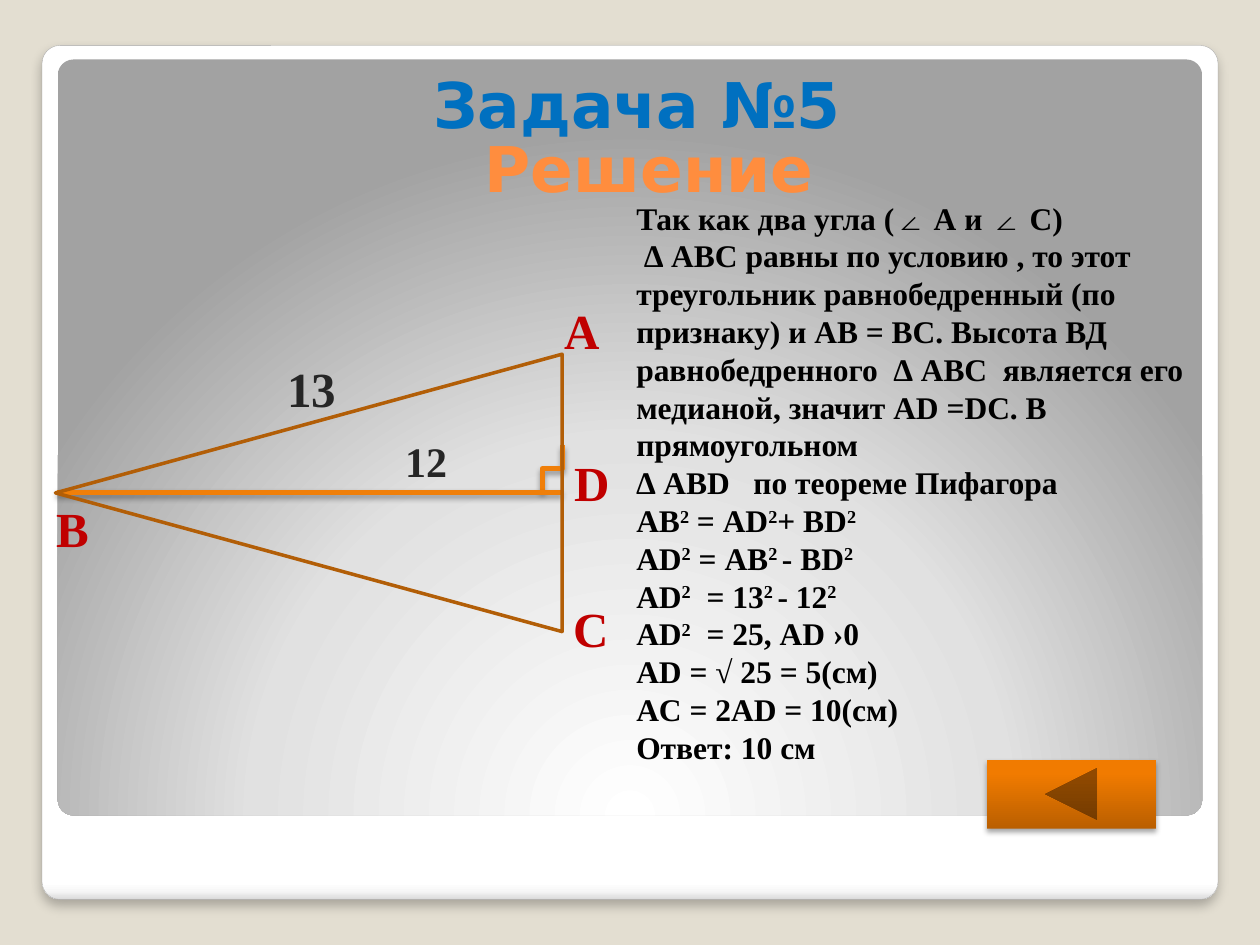
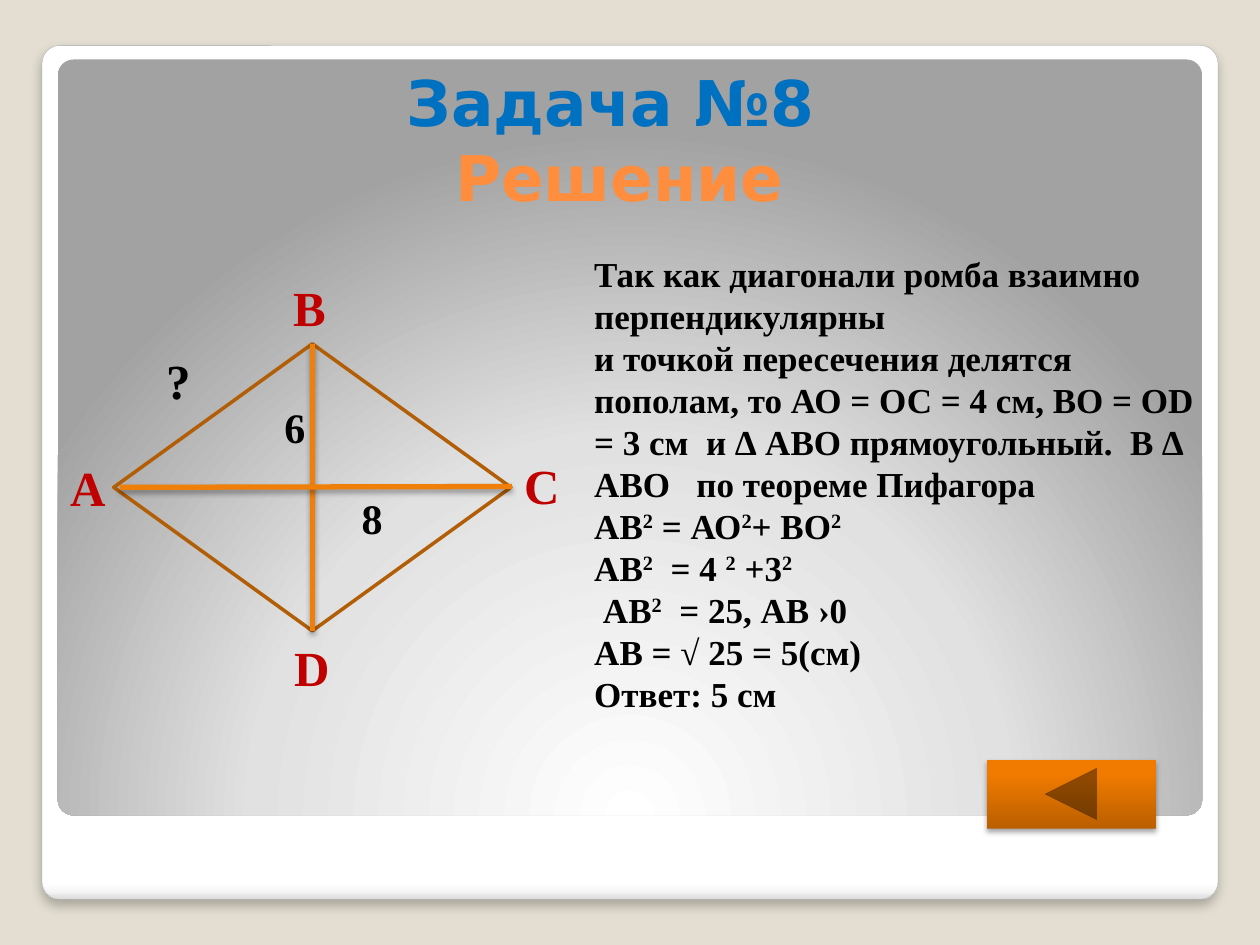
from dataclasses import dataclass
from typing import Optional

from lxml import etree
from pptx import Presentation
from pptx.dml.color import RGBColor
from pptx.enum.shapes import MSO_CONNECTOR, MSO_SHAPE
from pptx.enum.text import MSO_ANCHOR, MSO_AUTO_SIZE, PP_ALIGN
from pptx.oxml import parse_xml
from pptx.oxml.ns import nsdecls, qn
from pptx.util import Pt

ROUNDED = MSO_SHAPE.ROUNDED_RECTANGLE
BACK_BUTTON = MSO_SHAPE.ACTION_BUTTON_BACK_OR_PREVIOUS
TRIANGLE = MSO_SHAPE.ISOSCELES_TRIANGLE
DIAMOND = MSO_SHAPE.DIAMOND
STRAIGHT, ELBOW = MSO_CONNECTOR.STRAIGHT, MSO_CONNECTOR.ELBOW
CENTER, LEFT = PP_ALIGN.CENTER, PP_ALIGN.LEFT
BOTTOM = MSO_ANCHOR.BOTTOM
GROW, NO_GROW = MSO_AUTO_SIZE.SHAPE_TO_FIT_TEXT, MSO_AUTO_SIZE.NONE
TITLE_ONLY = 5

# Shared look
TITLE_FONT, BODY_FONT = "DejaVu Sans", "Times New Roman"
BEIGE, BLUE, PEACH = "E3DED1", "0070C0", "FF8D3E"
RED, BLACK, CHARCOAL = "C00000", "000000", "262626"
ORANGE, BROWN, EDGE_GREY = "F07F09", "B25E07", "A4A4A4"
HEADING_SIZE = (644, 83)
LABEL_HEIGHTS = {28: 41, 24: 37}


@dataclass(frozen=True)
class Box:
    left: float
    top: float
    width: float
    height: float


@dataclass(frozen=True)
class Gradient:
    stops: tuple[tuple[int, str], ...]
    angle: Optional[int] = None  # None: radial, centred below the shape


@dataclass(frozen=True)
class Shadow:
    opacity: int
    blur: float
    distance: float


@dataclass(frozen=True)
class Label:
    text: str
    left: float
    top: float
    width: float
    color: str = RED
    size: int = 28


@dataclass(frozen=True)
class Problem:
    title: str
    title_at: tuple[float, float]
    subtitle_at: tuple[float, float]
    labels: tuple[Label, ...]
    solution_box: Box
    solution_size: int
    solution: tuple[str, ...]  # ^ opens and closes a superscript


FRAME_FILL = Gradient(((0, "FFFFFF"), (98, "FFFFFF"), (99, "F7F7F7"), (100, "DADADA")), 90)
PANEL_FILL = Gradient(((0, "FFFFFF"), (55, "E1E1E1"), (100, "A2A2A2")))
BUTTON_FILL = Gradient(((0, "BA5F00"), (80, "F17B00"), (100, "F27C00")), 270)
FRAME_SHADOW = Shadow(25, 6, 4)
RAISED = Shadow(35, 3.1, 1.8)

TRIANGLE_PROBLEM = Problem(
    "Задача №5", (42, 1), (49, 37.5),
    (
        Label("C", 320.5, 338.5, 35.5),
        Label("А", 315.5, 168, 35.5),
        Label("B", 25, 281.5, 33),
        Label("13", 157, 201.5, 43, CHARCOAL),
        Label("12", 224.5, 245.5, 39, CHARCOAL, 24),
        Label("D", 321, 255, 34.5),
    ),
    Box(356.5, 110, 360, 335), 18,
    (
        "Так как два угла (∠ А и ∠ С)",
        " ∆ АВС равны по условию , то этот треугольник равнобедренный (по признаку) "
        "и АВ = ВС. Высота ВД равнобедренного  ∆ АВС  является его медианой, "
        "значит АD =DС. В прямоугольном",
        "∆ АВD   по теореме Пифагора",
        "АВ^2^ = АD^2^+ ВD^2^",
        "АD^2^ = АB^2 ^- ВD^2^",
        "АD^2^  = 13^2 ^- 12^2^",
        "АD^2^  = 25, АD ›0",
        "АD = √ 25 = 5(см)",
        "АC = 2АD = 10(см)",
        "Ответ: 10 см",
    ),
)
RHOMBUS_PROBLEM = Problem(
    "Задача №8", (27, 0), (32, 43),
    (
        Label("А", 33, 258, 35.5),
        Label("В", 160.5, 155, 33),
        Label("С", 292.5, 257, 35.5),
        Label("D", 161.5, 360.5, 35.5),
        Label("?", 88, 196.5, 29, BLACK),
        Label("8", 199.5, 278, 26.5, BLACK, 24),
        Label("6", 155.5, 226, 24.5, BLACK, 24),
    ),
    Box(332.5, 140.5, 360, 273.5), 20,
    (
        "Так как диагонали ромба взаимно перпендикулярны",
        "и точкой пересечения делятся пополам, то АО = ОС = 4 см, ВО = ОD = 3 см  "
        "и ∆ АВО прямоугольный.  В ∆ АВО   по теореме Пифагора",
        "АВ^2^ = АО^2^+ ВО^2^",
        "АВ^2^  = 4 ^2^ +3^2^",
        " АВ^2^  = 25, АВ ›0",
        "АВ = √ 25 = 5(см)",
        "Ответ: 5 см",
    ),
)


def rgb(color: str) -> RGBColor:
    return RGBColor.from_string(color)


def set_gradient(shape, gradient: Gradient) -> None:
    stops = "".join(
        f'<a:gs pos="{place * 1000}"><a:srgbClr val="{color}"/></a:gs>'
        for place, color in gradient.stops
    )
    if gradient.angle is None:
        course = ('<a:path path="circle"><a:fillToRect l="50000" t="175000" '
                  'r="50000" b="-75000"/></a:path>')
    else:
        course = f'<a:lin ang="{gradient.angle * 60000}" scaled="0"/>'
    fill = parse_xml(f'<a:gradFill {nsdecls("a")} rotWithShape="1">'
                     f'<a:gsLst>{stops}</a:gsLst>{course}</a:gradFill>')
    properties = shape._element.spPr
    properties.replace(properties.find(qn("a:noFill")), fill)


def set_shadow(shape, shadow: Shadow) -> None:
    properties = shape._element.spPr
    effects = properties.find(qn("a:effectLst"))
    if effects is None:
        effects = etree.SubElement(properties, qn("a:effectLst"))
    effects.append(parse_xml(
        f'<a:outerShdw {nsdecls("a")} blurRad="{Pt(shadow.blur)}" '
        f'dist="{Pt(shadow.distance)}" dir="5400000" algn="t" rotWithShape="0">'
        f'<a:srgbClr val="000000"><a:alpha val="{shadow.opacity * 1000}"/></a:srgbClr>'
        '</a:outerShdw>'))


def add_figure(slide, kind, box: Box, gradient: Optional[Gradient] = None,
               line: Optional[str] = None, weight: float = 2,
               shadow: Optional[Shadow] = None):
    figure = slide.shapes.add_shape(
        kind, Pt(box.left), Pt(box.top), Pt(box.width), Pt(box.height))
    figure.shadow.inherit = False
    figure.fill.background()
    if gradient:
        set_gradient(figure, gradient)
    if line:
        figure.line.color.rgb = rgb(line)
        figure.line.width = Pt(weight)
    else:
        figure.line.fill.background()
    if shadow:
        set_shadow(figure, shadow)
    return figure


def add_segment(slide, start: tuple[float, float], end: tuple[float, float], kind=STRAIGHT):
    segment = slide.shapes.add_connector(kind, *map(Pt, start + end))
    segment.line.color.rgb = rgb(ORANGE)
    segment.line.width = Pt(3)
    set_shadow(segment, RAISED)
    return segment


def write(frame, lines: tuple[str, ...], font: str, size: int, color: str, align=LEFT) -> None:
    for number, line in enumerate(lines):
        paragraph = frame.add_paragraph() if number else frame.paragraphs[0]
        paragraph.alignment = align
        for index, piece in enumerate(line.split("^")):
            if not piece:
                continue
            run = paragraph.add_run()
            run.text = piece
            run.font.name, run.font.size, run.font.bold = font, Pt(size), True
            run.font.color.rgb = rgb(color)
            if index % 2:
                run.font._element.set("baseline", "30000")


def add_text(slide, box: Box, lines: tuple[str, ...], size: int, color: str, wrap: bool) -> None:
    frame = slide.shapes.add_textbox(
        Pt(box.left), Pt(box.top), Pt(box.width), Pt(box.height)).text_frame
    frame.word_wrap, frame.auto_size = wrap, GROW
    write(frame, lines, BODY_FONT, size, color)


def format_heading(heading, at: tuple[float, float], text: str, color: str) -> None:
    heading.left, heading.top = map(Pt, at)
    heading.width, heading.height = map(Pt, HEADING_SIZE)
    frame = heading.text_frame
    frame.word_wrap, frame.auto_size, frame.vertical_anchor = True, NO_GROW, BOTTOM
    write(frame, (text,), TITLE_FONT, 36, color, CENTER)


def add_backdrop(slide) -> None:
    """Build the framed panel and move it to the layout that the slides share."""
    frame = add_figure(slide, ROUNDED, Box(24, 26, 672, 488), FRAME_FILL,
                       EDGE_GREY, 0.16, FRAME_SHADOW)
    panel = add_figure(slide, ROUNDED, Box(33, 34, 654, 432), PANEL_FILL)
    layout_tree = slide.slide_layout.shapes._spTree
    for order, part in enumerate((frame, panel)):
        part.adjustments[0] = 0.021
        part._element.nvSpPr.cNvPr.set("id", str(100 + order))
        layout_tree.insert(2 + order, part._element)


def add_problem(prs, problem: Problem):
    slide = prs.slides.add_slide(prs.slide_layouts[TITLE_ONLY])
    format_heading(slide.shapes.title, problem.title_at, problem.title, BLUE)
    subtitle = slide.shapes.add_textbox(0, 0, 0, 0)
    format_heading(subtitle, problem.subtitle_at, "Решение", PEACH)
    add_figure(slide, BACK_BUTTON, Box(564, 434, 96.5, 39.5), BUTTON_FILL, shadow=RAISED)
    for label in problem.labels:
        box = Box(label.left, label.top, label.width, LABEL_HEIGHTS[label.size])
        add_text(slide, box, (label.text,), label.size, label.color, wrap=False)
    add_text(slide, problem.solution_box, problem.solution,
             problem.solution_size, BLACK, wrap=True)
    return slide


def draw_triangle(slide) -> None:
    right_angle = add_segment(slide, (329, 273.6), (302.4, 262.1), ELBOW)
    right_angle._element.spPr.find(qn("a:xfrm")).set("rot", "5400000")
    add_segment(slide, (32.5, 281.6), (321, 281.6))
    triangle = add_figure(slide, TRIANGLE, Box(97.2, 136.9, 158.5, 289.5), line=BROWN)
    triangle.rotation = 270


def draw_rhombus(slide) -> None:
    rhombus = add_figure(slide, DIAMOND, Box(65, 196.5, 227, 164), line=BROWN)
    diagonal_bd = add_segment(slide, (178.5, 196.5), (178.5, 360.5))
    diagonal_bd.begin_connect(rhombus, 0)
    diagonal_bd.end_connect(rhombus, 2)
    add_segment(slide, (68.5, 278.5), (292.5, 278))


def main() -> None:
    prs = Presentation()
    prs.slide_width, prs.slide_height = Pt(720), Pt(540)
    backdrop = prs.slide_master.background.fill
    backdrop.solid()
    backdrop.fore_color.rgb = rgb(BEIGE)

    # Slide 1: isosceles triangle
    triangle_slide = add_problem(prs, TRIANGLE_PROBLEM)
    add_backdrop(triangle_slide)
    draw_triangle(triangle_slide)

    # Slide 2: rhombus
    draw_rhombus(add_problem(prs, RHOMBUS_PROBLEM))
    prs.save("out.pptx")


if __name__ == "__main__":
    main()
